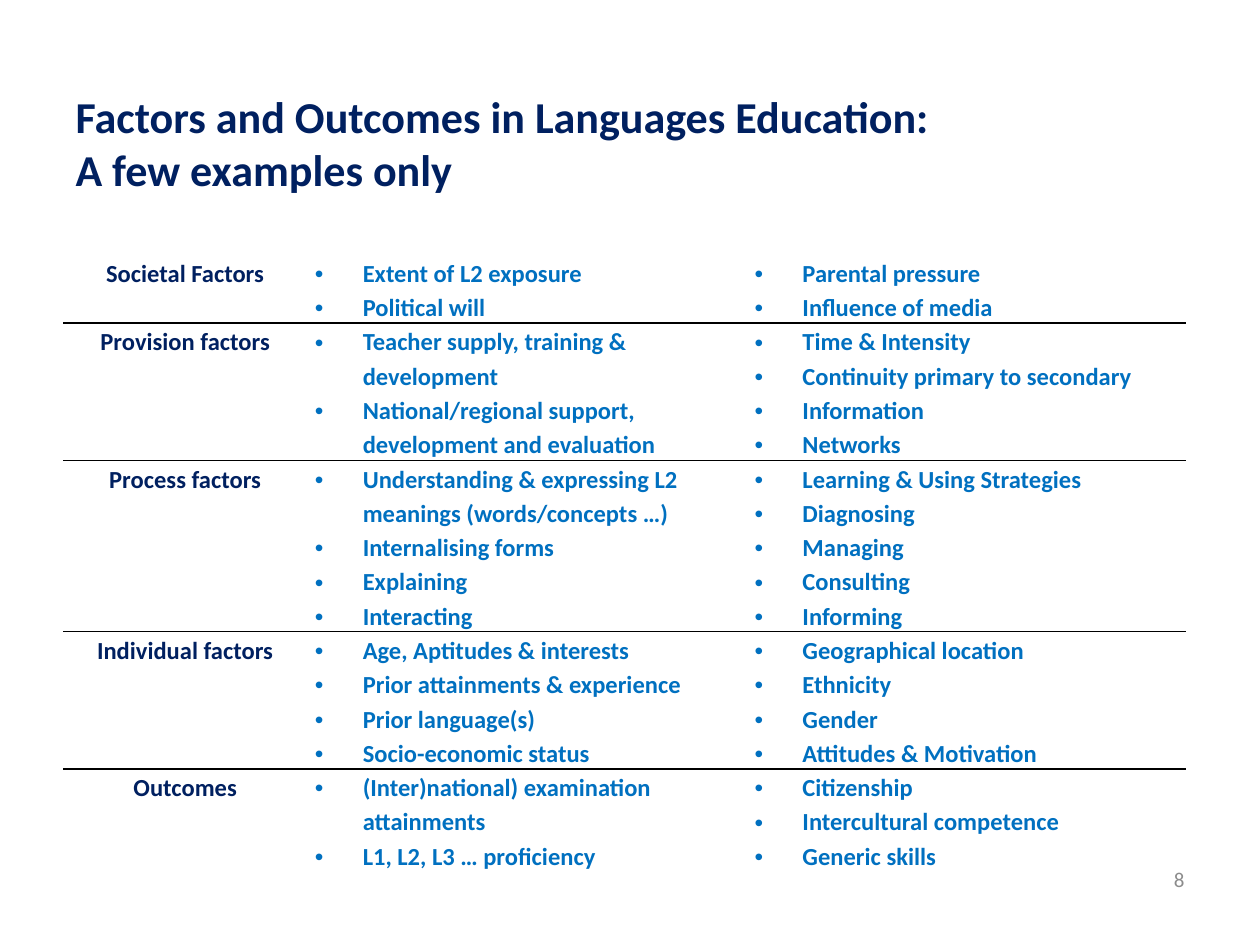
from lxml.etree import SubElement
from pptx import Presentation
from pptx.dml.color import RGBColor
from pptx.enum.text import MSO_ANCHOR, PP_ALIGN
from pptx.oxml import parse_xml
from pptx.oxml.ns import nsdecls, qn
from pptx.util import Inches, Pt

COLOURS = {"navy": "002060", "blue": "0070C0", "grey": "8C8C8C", "rule": "000000"}
LINE_HEIGHT = Inches(0.27)
INDENT = Inches(0.38)

# label, text lines in the row, left list, right list
FACTORS = [
    ("Societal Factors", 2,
     ["Extent of L2 exposure", "Political will"],
     ["Parental pressure", "Influence of media"]),
    ("Provision factors", 4,
     ["Teacher supply, training & development",
      "National/regional support, development and evaluation"],
     ["Time & Intensity", "Continuity primary to secondary", "Information", "Networks"]),
    ("Process factors", 5,
     ["Understanding & expressing L2 meanings (words/concepts …)",
      "Internalising forms", "Explaining", "Interacting"],
     ["Learning & Using Strategies", "Diagnosing", "Managing", "Consulting", "Informing"]),
    ("Individual factors", 4,
     ["Age, Aptitudes & interests", "Prior attainments & experience",
      "Prior language(s)", "Socio-economic status"],
     ["Geographical location", "Ethnicity", "Gender", "Attitudes & Motivation"]),
    ("Outcomes", 3,
     ["(Inter)national) examination attainments", "L1, L2, L3 … proficiency"],
     ["Citizenship", "Intercultural competence", "Generic skills"]),
]


def write(frame, lines, colour, size, bold, align, spacing=1.0):
    """Fill a text frame with one formatted paragraph per line."""
    frame.text = "\n".join(lines)
    for para in frame.paragraphs:
        para.alignment = align
        para.line_spacing = spacing
        for span in para.runs:
            for name, value in {"name": "Calibri", "size": Pt(size), "bold": bold}.items():
                setattr(span.font, name, value)
            span.font.color.rgb = RGBColor.from_string(COLOURS[colour])


def add_rule(cell, tag, position):
    """Draw a thin border on one side of a cell."""
    cell._tc.get_or_add_tcPr().insert(position, parse_xml(
        f'<a:{tag} {nsdecls("a")} w="12700"><a:solidFill>'
        f'<a:srgbClr val="{COLOURS["rule"]}"/></a:solidFill></a:{tag}>'))


deck = Presentation()
deck.slide_width, deck.slide_height = Inches(10), Inches(7.5)
width, height = deck.slide_width, deck.slide_height
page = deck.slides.add_slide(deck.slide_layouts[5])

title = page.shapes.title
title_place = {"left": 0.05 * width, "top": 0.04 * height,
               "width": 0.9 * width, "height": Inches(1.25)}
for name, value in title_place.items():
    setattr(title, name, int(value))
title.text_frame.vertical_anchor = MSO_ANCHOR.BOTTOM
title.text_frame.margin_bottom = 0
write(title.text_frame,
      ["Factors and Outcomes in Languages Education:\vA few examples only"],
      "navy", 25.2, True, PP_ALIGN.LEFT)

total_lines = sum(row[1] for row in FACTORS)
table = page.shapes.add_table(
    len(FACTORS), 3, Inches(0.51), Inches(2.02), Inches(8.9),
    total_lines * LINE_HEIGHT).table
table.first_row = table.horz_banding = False
for column, share in zip(table.columns, (0.192, 0.349, 0.349)):
    column.width = int(share * width)

for row_index, (label, line_count, *lists) in enumerate(FACTORS):
    table.rows[row_index].height = line_count * LINE_HEIGHT
    for column_index, lines in enumerate([[label], *lists]):
        cell = table.cell(row_index, column_index)
        cell.fill.background()
        cell.margin_left = cell.margin_right = Inches(0.07)
        cell.margin_top = cell.margin_bottom = 0
        is_label = column_index == 0
        write(cell.text_frame, lines, "navy" if is_label else "blue", 14, True,
              PP_ALIGN.CENTER if is_label else PP_ALIGN.LEFT, 1.15)
        if not is_label:
            for para in cell.text_frame.paragraphs:
                properties = para._p.get_or_add_pPr()
                properties.set("marL", str(INDENT))
                properties.set("indent", str(-INDENT))
                SubElement(properties, qn("a:buFont"), typeface="Arial")
                SubElement(properties, qn("a:buChar"), char="•")
        # Rules run between rows only, not around the table
        if row_index < len(FACTORS) - 1:
            add_rule(cell, "lnB", 0)
        if row_index > 0:
            add_rule(cell, "lnT", 0)

number = page.shapes.add_textbox(
    Inches(7.17), Inches(6.83), Inches(2.33), Inches(0.5))
number.text_frame.word_wrap = True
write(number.text_frame, ["8"], "grey", 12, False, PP_ALIGN.RIGHT)

deck.save("out.pptx")
